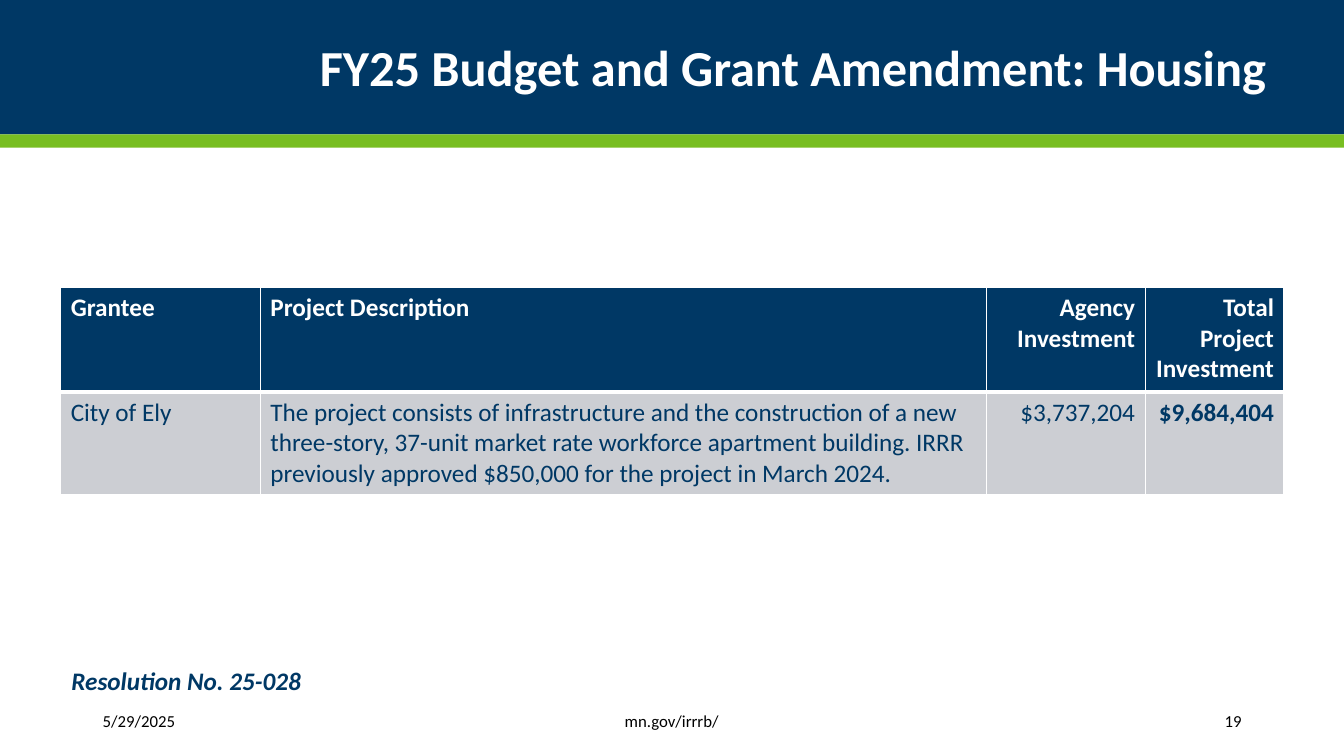
from pptx import Presentation
from pptx.dml.color import RGBColor
from pptx.enum.shapes import MSO_SHAPE
from pptx.enum.text import MSO_ANCHOR, MSO_AUTO_SIZE, PP_ALIGN as AL
from pptx.oxml import parse_xml
from pptx.oxml.ns import nsdecls
from pptx.util import Cm, Pt

# Content
TITLE = "FY25 Budget and Grant Amendment: Housing"
RESOLUTION = "Resolution No. 25-028"
HEADER = ("Grantee", "Project Description", "Agency Investment",
          "Total Project Investment")
PROJECT = ("City of Ely",
           "The project consists of infrastructure and the construction of a "
           "new three-story, 37-unit market rate workforce apartment building. "
           "IRRR previously approved $850,000 for the project in March 2024.",
           "$3,737,204", "$9,684,404")
COLUMNS = ((5.03, AL.LEFT), (18.31, AL.LEFT), (3.99, AL.RIGHT), (3.5, AL.RIGHT))
ROW_HEIGHTS = (2.64, 2.59)
FOOTER = (  # text, left, width, alignment
    ("5/29/2025", 2.34, 3.78, AL.LEFT),
    ("mn.gov/irrrb/", 9.17, 15.52, AL.CENTER),
    ("19", 27.48, 4.06, AL.RIGHT),
)
COLORS = {"navy": "003865", "green": "78BE21", "gray": "CCCED3",
          "white": "FFFFFF", "black": "000000"}
WIDTH, HEIGHT = Cm(33.87), Cm(19.05)


def rgb(name):
    return RGBColor.from_string(COLORS[name])


def style(p, size, color, bold=False, italic=False, align=AL.LEFT):
    p.alignment = align
    f = p.font
    f.name, f.size, f.bold, f.italic = "Calibri", Pt(size), bold, italic
    f.color.rgb = rgb(color)


def add_text(s, text, left, top, width, height, size, color, **kw):
    tf = s.shapes.add_textbox(Cm(left), Cm(top), Cm(width), Cm(height)).text_frame
    tf.word_wrap = True
    tf.vertical_anchor = MSO_ANCHOR.MIDDLE
    tf.text = text
    style(tf.paragraphs[0], size, color, **kw)


def set_borders(cell, widths):
    tcPr = cell._tc.get_or_add_tcPr()
    for i, (side, width) in enumerate(widths.items()):
        tcPr.insert(i, parse_xml(
            f'<a:ln{side} {nsdecls("a")} w="{Pt(width)}"><a:solidFill>'
            f'<a:srgbClr val="{COLORS["white"]}"/></a:solidFill></a:ln{side}>'))


prs = Presentation()
prs.slide_width, prs.slide_height = WIDTH, HEIGHT
s = prs.slides.add_slide(prs.slide_layouts[5])

# Title, with the header bands behind it
title = s.shapes.title
title.left, title.top, title.width, title.height = Cm(2.97), Cm(0.51), Cm(29.21), Cm(2.54)
tf = title.text_frame
tf.text = TITLE
tf.vertical_anchor = MSO_ANCHOR.MIDDLE
tf.auto_size = MSO_AUTO_SIZE.NONE
tf.paragraphs[0].line_spacing = 0.9
style(tf.paragraphs[0], 36, "white", bold=True, align=AL.RIGHT)

for top, height, color in ((0, 3.39, "navy"), (3.39, 0.33, "green")):
    sp = s.shapes.add_shape(MSO_SHAPE.RECTANGLE, 0, Cm(top), WIDTH, Cm(height))
    sp.shadow.inherit = False
    sp.fill.solid()
    sp.fill.fore_color.rgb = rgb(color)
    sp.line.fill.background()
    title.element.addprevious(sp.element)

# Footer
for text, left, width, align in FOOTER:
    add_text(s, text, left, 17.65, width, 1.02, 12, "black", align=align)

# Grant table
table = s.shapes.add_table(2, len(COLUMNS), Cm(1.53), Cm(7.24),
                           Cm(sum(w for w, _ in COLUMNS)),
                           Cm(sum(ROW_HEIGHTS))).table
for r, texts in enumerate((HEADER, PROJECT)):
    table.rows[r].height = Cm(ROW_HEIGHTS[r])
    is_header = r == 0
    for c, (text, (width, align)) in enumerate(zip(texts, COLUMNS)):
        table.columns[c].width = Cm(width)
        cell = table.cell(r, c)
        cell.text = text
        cell.fill.solid()
        cell.fill.fore_color.rgb = rgb("navy" if is_header else "gray")
        is_total = c == len(COLUMNS) - 1
        style(cell.text_frame.paragraphs[0], 18, "white" if is_header else "navy",
              bold=is_header or is_total, align=align)
        set_borders(cell, {"L": 1, "R": 1, "T": 1 if is_header else 3,
                           "B": 3 if is_header else 1})

# Resolution number
add_text(s, RESOLUTION, 1.55, 16.64, 18.97, 1.02, 18, "navy", bold=True, italic=True)

prs.save("out.pptx")
